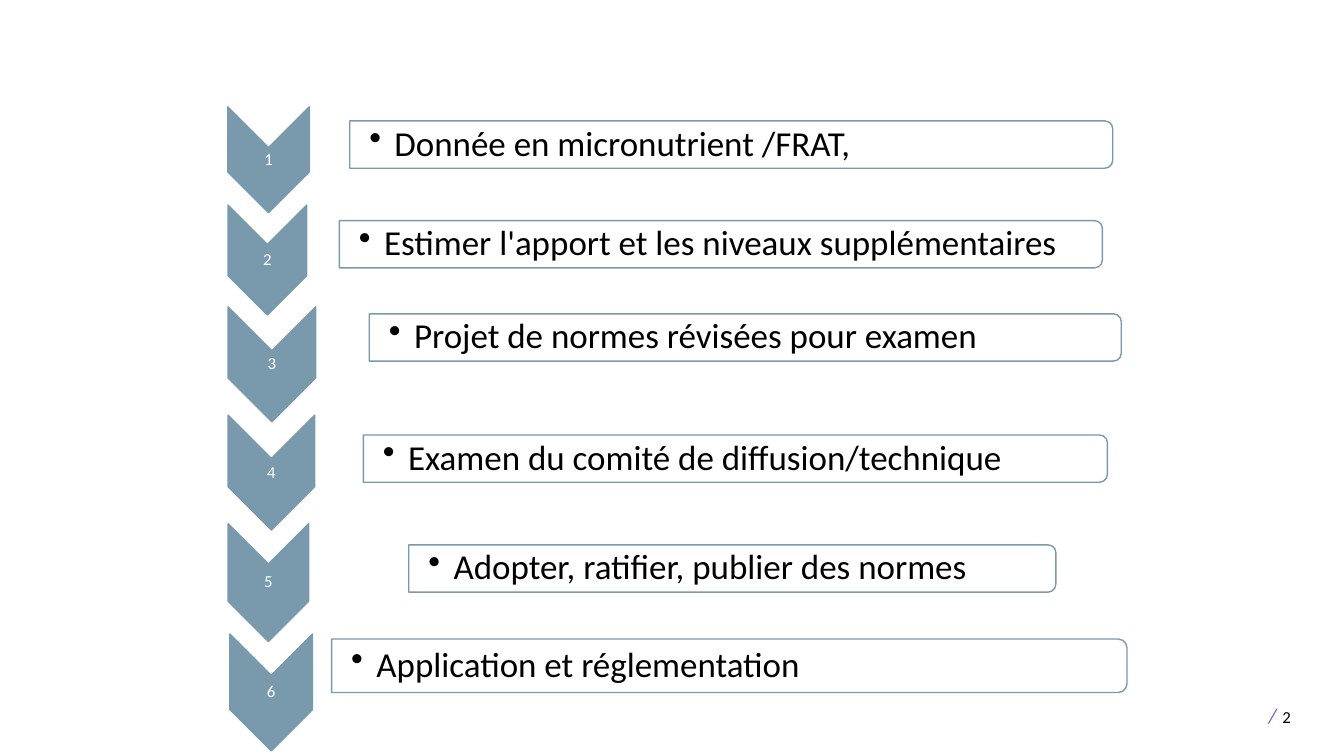
from lxml import etree
from pptx import Presentation
from pptx.dml.color import RGBColor
from pptx.enum.shapes import MSO_SHAPE as Shape
from pptx.enum.text import MSO_ANCHOR as Anchor, PP_ALIGN as Align
from pptx.oxml.ns import qn
from pptx.util import Pt

STEEL = RGBColor(0x79, 0x99, 0xAC)
WHITE = RGBColor(0xFF, 0xFF, 0xFF)
BLACK = RGBColor(0, 0, 0)
PURPLE = RGBColor(0x90, 0x53, 0xA1)
FONT = "Calibri"

STEPS = [
    ("Donnée en micronutrient /FRAT,",
     (162.7, 76.3, 58.3, 75.6), (249.8, 86.4, 545, 33.8)),
    ("Estimer l'apport et les niveaux supplémentaires",
     (162.9, 146.5, 56.2, 78.5), (242.4, 157.6, 545, 33.8)),
    ("Projet de normes révisées pour examen",
     (162.9, 219.2, 62.6, 82.1), (263.8, 224.2, 537.1, 33.8)),
    ("Examen du comité de diffusion/technique",
     (162.9, 296.6, 61.9, 82.1), (259.6, 310.7, 531.4, 33.8)),
    ("Adopter, ratifier, publier des normes",
     (162.9, 374, 57.6, 84.2), (292, 389.2, 462.2, 33.8)),
    ("Application et réglementation",
     (164.2, 452.9, 59, 83.5), (236.9, 456.5, 568.1, 38.2)),
]


def add_turned_shape(slide, kind, box, fill):
    left, top, width, height = box
    shape = slide.shapes.add_shape(
        kind, Pt(left + (width - height) / 2), Pt(top + (height - width) / 2),
        Pt(height), Pt(width))
    shape.rotation = 90
    shape.shadow.inherit = False
    shape.fill.solid()
    shape.fill.fore_color.rgb = fill
    shape.line.color.rgb = STEEL
    shape.line.width = Pt(1)
    return shape


def add_text_box(slide, box, anchor, insets):
    text_box = slide.shapes.add_textbox(*[Pt(length) for length in box])
    frame = text_box.text_frame
    frame.word_wrap = True
    frame.vertical_anchor = anchor
    (frame.margin_left, frame.margin_top,
     frame.margin_right, frame.margin_bottom) = [Pt(inset) for inset in insets]
    return frame.paragraphs[0]


def add_run(paragraph, text, size, color, italic=False):
    run = paragraph.add_run()
    run.text = text
    run.font.name = FONT
    run.font.size = Pt(size)
    run.font.color.rgb = color
    run.font.italic = italic


def add_bullet(paragraph):
    properties = paragraph._p.get_or_add_pPr()
    properties.set("marL", str(Pt(18)))
    properties.set("indent", str(-Pt(18)))
    etree.SubElement(properties, qn("a:buChar")).set("char", "•")


def add_chevron(slide, number, box):
    left, top, width, height = box
    add_turned_shape(slide, Shape.CHEVRON, box, STEEL)
    number_box = (left, top + width / 2, width, height - width)
    paragraph = add_text_box(slide, number_box, Anchor.MIDDLE, (0.6,) * 4)
    paragraph.alignment = Align.CENTER
    paragraph.line_spacing = 0.9
    add_run(paragraph, str(number), 12, WHITE)


def add_bar(slide, text, box):
    left, top, width, height = box
    bar = add_turned_shape(slide, Shape.ROUND_2_SAME_RECTANGLE, box, WHITE)
    color = bar._element.spPr.find(qn("a:solidFill"))[0]
    etree.SubElement(color, qn("a:alpha")).set("val", "90000")
    label_box = (left, top + 1.5, width - 2, height - 3)
    paragraph = add_text_box(slide, label_box, Anchor.MIDDLE, (14, 1.3, 1.3, 1.3))
    add_bullet(paragraph)
    paragraph.line_spacing = 0.9
    add_run(paragraph, text, 25, BLACK)


def add_page_number(slide):
    paragraph = add_text_box(slide, (895, 495.4, 62.6, 28.8), Anchor.TOP,
                             (7.2, 3.6, 7.2, 3.6))
    add_run(paragraph, " ", 18, BLACK)
    add_run(paragraph, "/", 15, PURPLE, italic=True)
    add_run(paragraph, " ", 18, BLACK)
    add_run(paragraph, "2", 12, BLACK)


def main():
    presentation = Presentation()
    presentation.slide_width = Pt(960)
    presentation.slide_height = Pt(540)
    slide = presentation.slides.add_slide(presentation.slide_layouts[6])
    add_page_number(slide)
    for number, (text, chevron_box, bar_box) in enumerate(STEPS, start=1):
        add_chevron(slide, number, chevron_box)
        add_bar(slide, text, bar_box)
    presentation.save("out.pptx")


if __name__ == "__main__":
    main()
